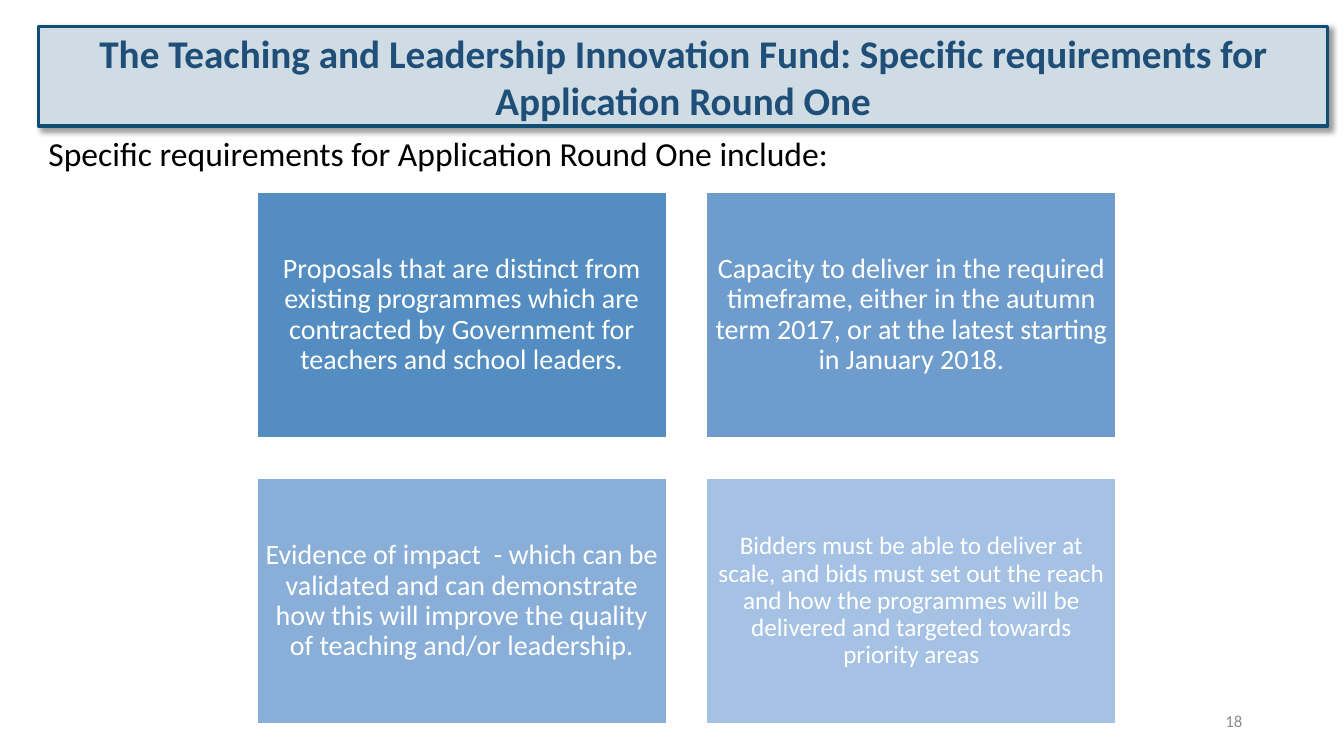
from lxml import etree
from pptx import Presentation
from pptx.dml.color import RGBColor
from pptx.enum import shapes, text
from pptx.oxml import ns
from pptx.util import Inches, Pt

COLOURS = {
    "white": "FFFFFF", "black": "000000", "grey": "8C8C8C",
    "title fill": "CFDCE3", "title line": "104F75", "title text": "1F4E79",
}
REQUIREMENTS = [
    ("Proposals that are distinct from existing programmes which are contracted by "
     "Government for teachers and school leaders.", "538DC1", 20, 0.08),
    ("Capacity to deliver in the required timeframe, either in the autumn term 2017, "
     "or at the latest starting in January 2018.", "6E9DCD", 20, 0.08),
    ("Evidence of impact  - which can be validated and can demonstrate how this will "
     "improve the quality of teaching and/or leadership.", "89AFD8", 20, 0.08),
    ("Bidders must be able to deliver at scale, and bids must set out the reach and how "
     "the programmes will be delivered and targeted towards priority areas", "A5C1E3", 18, 0.07),
]


def place(shape, left, top, width, height):
    shape.left, shape.top = Inches(left), Inches(top)
    shape.width, shape.height = Inches(width), Inches(height)


def write(shape, words, size, colour, align, anchor, bold=False):
    frame = shape.text_frame
    frame.text = words
    frame.word_wrap = True
    frame.auto_size = text.MSO_AUTO_SIZE.NONE
    frame.vertical_anchor = anchor
    para = frame.paragraphs[0]
    para.alignment = align
    para.font.name = "Calibri"
    para.font.size = Pt(size)
    para.font.bold = bold
    para.font.color.rgb = RGBColor.from_string(COLOURS[colour])
    return para


deck = Presentation()
deck.slide_width, deck.slide_height = Inches(13.33), Inches(7.5)
page = deck.slides.add_slide(deck.slide_layouts[1])
centre, middle = text.PP_ALIGN.CENTER, text.MSO_ANCHOR.MIDDLE

title = page.shapes.title
place(title, 0.38, 0.26, 12.79, 0.99)
title.fill.solid()
title.fill.fore_color.rgb = RGBColor.from_string(COLOURS["title fill"])
title.line.color.rgb = RGBColor.from_string(COLOURS["title line"])
title.line.width = Pt(2.25)
write(title, "The Teaching and Leadership Innovation Fund: Specific requirements for "
      "Application Round One", 28, "title text", centre, middle, True)
effects = etree.SubElement(title._element.spPr, ns.qn("a:effectLst"))
shadow = etree.SubElement(effects, ns.qn("a:outerShdw"), blurRad=str(Pt(4)),
                          dist=str(Pt(3)), dir=str(45 * 60000), algn="tl", rotWithShape="0")
shade = etree.SubElement(shadow, ns.qn("a:srgbClr"), val=COLOURS["black"])
etree.SubElement(shade, ns.qn("a:alpha"), val="40000")

intro = page.placeholders[1]
place(intro, 0.38, 1.31, 11.5, 0.56)
para = write(intro, "Specific requirements for Application Round One include:",
             24, "black", text.PP_ALIGN.LEFT, text.MSO_ANCHOR.TOP)
para.line_spacing = 0.9
para.space_before = Pt(10)
properties = para._p.get_or_add_pPr()
properties.set("marL", "0")
properties.set("indent", "0")
bullet = etree.Element(ns.qn("a:buNone"))
properties.find(ns.qn("a:defRPr")).addprevious(bullet)

for index, (words, fill, size, inset) in enumerate(REQUIREMENTS):
    row, column = divmod(index, 2)
    box = page.shapes.add_shape(
        shapes.MSO_SHAPE.RECTANGLE, Inches(2.55 + 4.46 * column),
        Inches(1.91 + 2.84 * row), Inches(4.06), Inches(2.43))
    box.shadow.inherit = False
    box.fill.solid()
    box.fill.fore_color.rgb = RGBColor.from_string(fill)
    box.line.color.rgb = RGBColor.from_string(COLOURS["white"])
    box.line.width = Pt(1)
    write(box, words, size, "white", centre, middle).line_spacing = 0.9
    frame = box.text_frame
    frame.margin_left = frame.margin_right = Inches(inset)
    frame.margin_top = frame.margin_bottom = Inches(inset)

number = page.shapes.add_textbox(Inches(9.42), Inches(6.95), Inches(3), Inches(0.4))
write(number, "18", 12, "grey", text.PP_ALIGN.RIGHT, middle)

deck.save("out.pptx")
